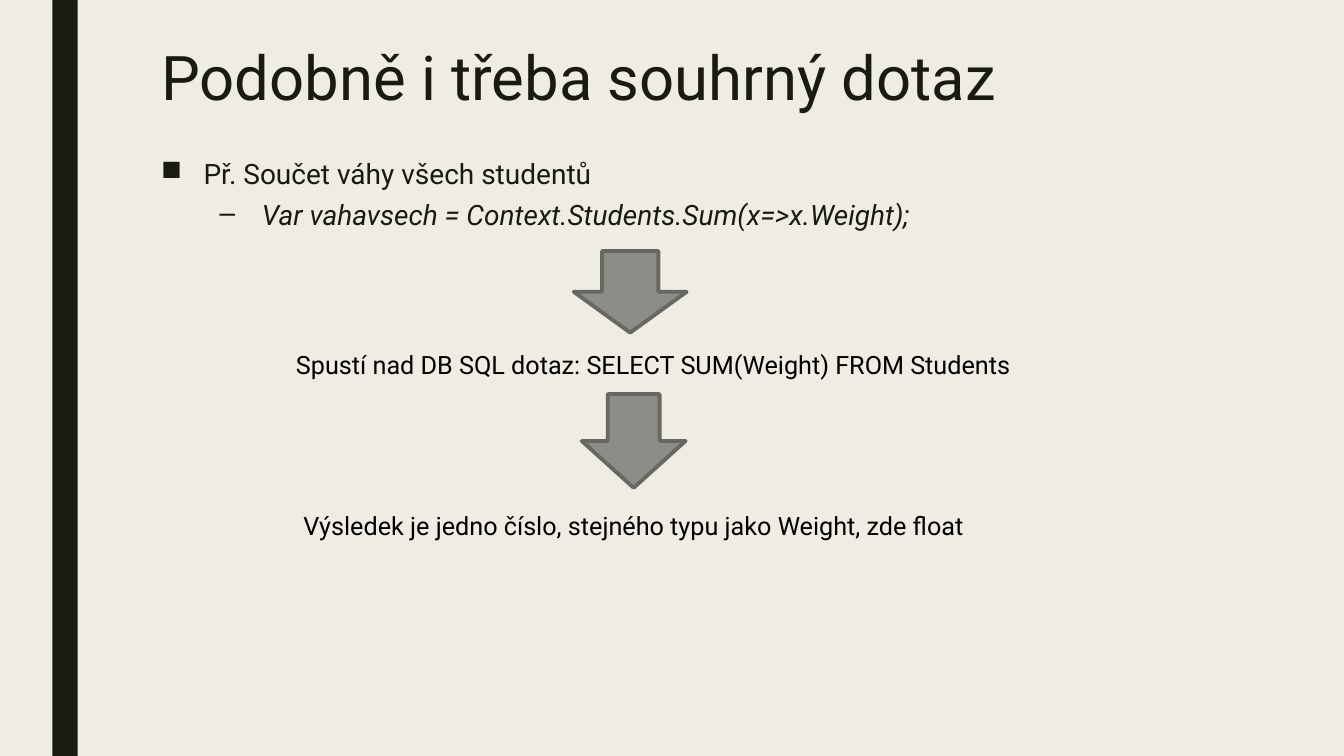
from lxml.etree import SubElement as Sub
from pptx import Presentation
from pptx.dml.color import RGBColor
from pptx.enum.shapes import MSO_SHAPE as Kind
from pptx.enum.text import MSO_ANCHOR as Anchor, MSO_AUTO_SIZE as Fit, PP_ALIGN as Align
from pptx.oxml.ns import qn
from pptx.util import Inches, Pt

DARK = "191B0E"


def paint(part, color):
    part.solid()
    part.fore_color.rgb = RGBColor.from_string(color)


def style(target, values):
    for name, value in values.items():
        setattr(target, name, value)


def write(par, text, size, color, form, italic=None):
    style(par, form)
    run = par.add_run()
    run.text = text
    style(run.font, {"name": "Roboto", "size": Pt(size), "italic": italic})
    paint(run.font.fill, color)


def place(shape, box):
    names = ("left", "top", "width", "height")
    style(shape, dict(zip(names, map(Inches, box))))


def frame(shape, fit):
    text = shape.text_frame
    style(text, {"word_wrap": True, "auto_size": fit, "vertical_anchor": Anchor.TOP})
    return text


def head(slide, text, box):
    title = slide.shapes.title
    place(title, box)
    par = frame(title, Fit.NONE).paragraphs[0]
    write(par, text, 44, DARK, {"alignment": Align.LEFT, "line_spacing": 0.89})


def bullets(slide, items, box):
    text = frame(slide.shapes.add_textbox(*map(Inches, box)), Fit.NONE)
    for level, (item, mark, left, before, italic) in enumerate(items):
        par = text.add_paragraph() if level else text.paragraphs[0]
        form = {
            "level": level,
            "line_spacing": 0.94,
            "space_before": Pt(before),
            "space_after": Pt(2),
        }
        write(par, item, 20, DARK, form, italic)
        props = par._p.get_or_add_pPr()
        props.set("marL", str(Inches(left)))
        props.set("indent", str(Inches(-0.42)))
        Sub(props, qn("a:buChar")).set("char", mark)


def label(slide, text, box):
    shape = slide.shapes.add_textbox(*map(Inches, box))
    par = frame(shape, Fit.SHAPE_TO_FIT_TEXT).paragraphs[0]
    write(par, text, 18, "000000", {"alignment": Align.CENTER})


def block(slide, kind, box, color, edge=None):
    shape = slide.shapes.add_shape(kind, *map(Inches, box))
    shape.shadow.inherit = False
    paint(shape.fill, color)
    if edge:
        paint(shape.line.fill, edge)
        shape.line.width = Pt(2.75)
    else:
        shape.line.fill.background()


def main():
    deck = Presentation()
    style(deck, {"slide_width": Inches(13.33), "slide_height": Inches(7.5)})
    slide = deck.slides.add_slide(deck.slide_layouts[5])
    paint(slide.background.fill, "EFEDE3")

    block(slide, Kind.RECTANGLE, (0.52, 0, 0.25, 7.5), DARK)
    head(slide, "Podobně i třeba souhrný dotaz", (1.5, 0.42, 10.61, 0.93))
    items = [
        ("Př. Součet váhy všech studentů", "■", 0.42, 10, None),
        ("Var vahavsech = Context.Students.Sum(x=>x.Weight);", "–", 1, 5, True),
    ]
    bullets(slide, items, (1.5, 1.53, 10.61, 5.35))

    steps = [
        (
            (5.69, 2.49, 1.12, 0.81),
            "Spustí nad DB SQL dotaz: SELECT SUM(Weight) FROM Students",
            (1.72, 3.42, 9.52, 0.4),
        ),
        (
            (5.77, 3.91, 1.03, 0.93),
            "Výsledek je jedno číslo, stejného typu jako Weight, zde float",
            (2.08, 5.01, 8.41, 0.4),
        ),
    ]
    for arrow, text, box in steps:
        block(slide, Kind.DOWN_ARROW, arrow, "8C8D86", "686863")
        label(slide, text, box)
    deck.save("out.pptx")


if __name__ == "__main__":
    main()
